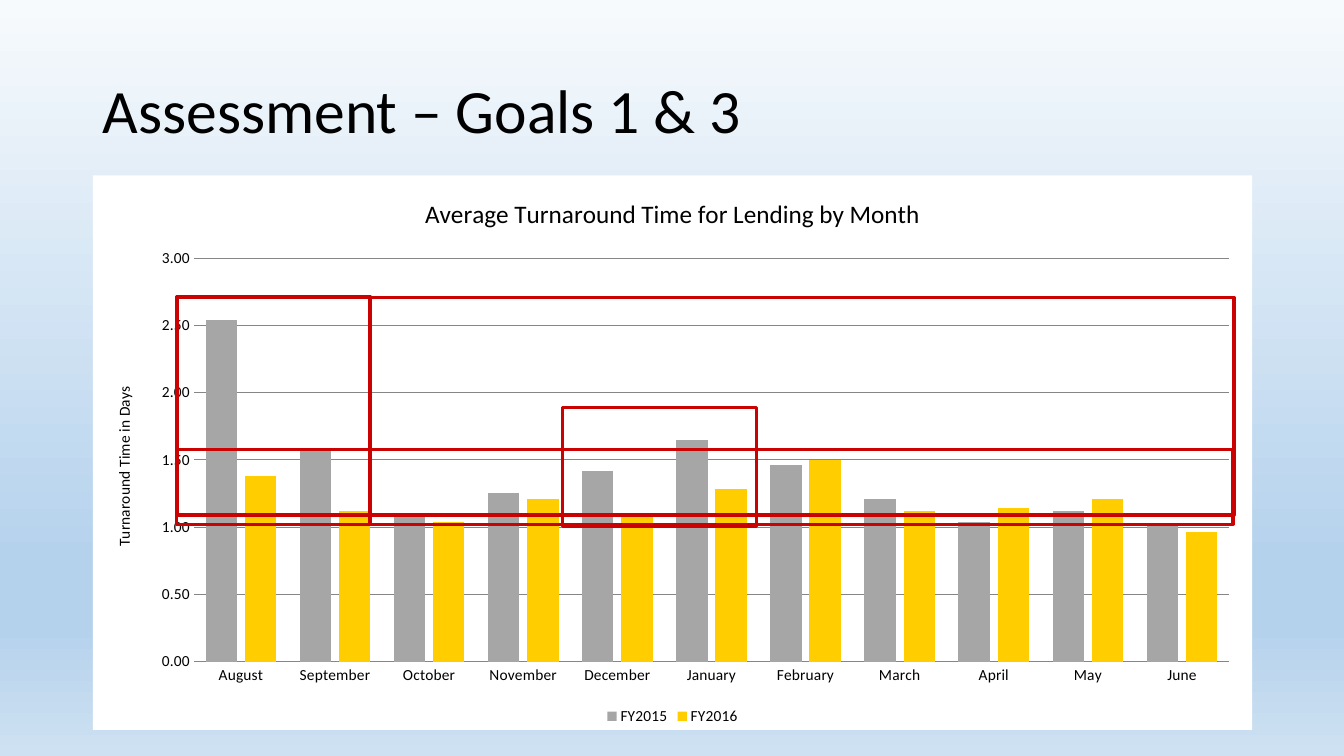
from lxml import etree
from pptx import Presentation
from pptx.chart.data import CategoryChartData
from pptx.dml.color import RGBColor
from pptx.enum.chart import XL_CHART_TYPE, XL_LEGEND_POSITION, XL_TICK_MARK
from pptx.enum.shapes import MSO_SHAPE
from pptx.enum.text import MSO_ANCHOR
from pptx.oxml import parse_xml
from pptx.oxml.ns import nsdecls, qn
from pptx.util import Inches, Pt

COLUMNS = XL_CHART_TYPE.COLUMN_CLUSTERED
BOTTOM = XL_LEGEND_POSITION.BOTTOM
NO_TICK = XL_TICK_MARK.NONE
RECTANGLE = MSO_SHAPE.RECTANGLE
MIDDLE = MSO_ANCHOR.MIDDLE

MONTHS = ["August", "September", "October", "November", "December", "January",
          "February", "March", "April", "May", "June"]
TURNAROUND = [
    ("FY2015", "A6A6A6", [2.54, 1.58, 1.08, 1.25, 1.42, 1.65, 1.46, 1.21, 1.04, 1.12, 1.02]),
    ("FY2016", "FFCD00", [1.38, 1.12, 1.04, 1.21, 1.1, 1.28, 1.5, 1.12, 1.14, 1.21, 0.96]),
]
SKY = [(0, "F7FAFD"), (74, "B5D2EC"), (83, "B5D2EC"), (100, "CEE1F2")]
HIGHLIGHTS = [
    (1.75, 2.94, 1.92, 2.26),
    (5.58, 4.04, 1.92, 1.18),
    (1.75, 4.46, 10.48, 0.74),
    (1.76, 2.95, 10.48, 2.16),
]


def rgb(value):
    return RGBColor.from_string(value)


class SlideBuilder:
    font_name = "Calibri"
    ink = "000000"
    grid_color = "868686"
    highlight_color = "CB0202"

    def __init__(self, slide):
        self.slide = slide

    def style(self, font, size):
        font.name = self.font_name
        font.size = Pt(size)
        font.bold = False
        font.color.rgb = rgb(self.ink)

    def background(self, stops):
        fill = self.slide.background.fill
        fill.gradient()
        fill.gradient_angle = 270
        stop_list = self.slide.element.find(".//" + qn("a:gsLst"))
        for stop in list(stop_list):
            stop_list.remove(stop)
        for percent, color in stops:
            stop = etree.SubElement(stop_list, qn("a:gs"), pos=str(percent * 1000))
            etree.SubElement(stop, qn("a:srgbClr"), val=color)

    def heading(self, text, box, size):
        frame = self.slide.shapes.add_textbox(*map(Inches, box)).text_frame
        frame.word_wrap = True
        frame.vertical_anchor = MIDDLE
        frame.text = text
        paragraph = frame.paragraphs[0]
        paragraph.line_spacing = 0.9
        self.style(paragraph.runs[0].font, size)

    def caption(self, owner, text, size):
        frame = owner.text_frame
        frame.text = text
        self.style(frame.paragraphs[0].runs[0].font, size)
        return frame

    def axis(self, axis):
        axis.major_tick_mark = NO_TICK
        axis.minor_tick_mark = NO_TICK
        self.style(axis.tick_labels.font, 11)

    def column_chart(self, title, value_title, categories, series, box):
        data = CategoryChartData(number_format="0.00")
        data.categories = categories
        for name, _, values in series:
            data.add_series(name, values)
        chart = self.slide.shapes.add_chart(COLUMNS, *map(Inches, box), data).chart
        self.style(chart.font, 10)
        chart.element.find(qn("c:chart")).addnext(parse_xml(
            f'<c:spPr {nsdecls("c", "a")}><a:solidFill><a:srgbClr val="FFFFFF"/>'
            '</a:solidFill><a:ln><a:noFill/></a:ln></c:spPr>'))

        self.caption(chart.chart_title, title, 18)
        chart.chart_title.include_in_layout = False
        chart.has_legend = True
        chart.legend.position = BOTTOM
        chart.legend.include_in_layout = False
        self.style(chart.legend.font, 11)

        months, days = chart.category_axis, chart.value_axis
        self.axis(months)
        self.axis(days)
        months.format.line.color.rgb = rgb(self.grid_color)
        days.format.line.fill.background()
        days.minimum_scale, days.maximum_scale, days.major_unit = 0, 3, 0.5
        days.major_gridlines.format.line.color.rgb = rgb(self.grid_color)
        days.tick_labels.number_format = "0.00"
        days.tick_labels.number_format_is_linked = False
        value_frame = self.caption(days.axis_title, value_title, 11)
        value_frame._txBody.bodyPr.set("rot", "-5400000")

        plot = chart.plots[0]
        plot.vary_by_categories = False
        plot.gap_width = 75
        plot.overlap = -25
        for columns, (_, color, _) in zip(plot.series, series):
            columns.format.fill.solid()
            columns.format.fill.fore_color.rgb = rgb(color)

    def highlight(self, box):
        frame = self.slide.shapes.add_shape(RECTANGLE, *map(Inches, box))
        frame.shadow.inherit = False
        frame.fill.background()
        frame.line.color.rgb = rgb(self.highlight_color)
        frame.line.width = Pt(2.25)


def main():
    deck = Presentation()
    deck.slide_width = Inches(13.33)
    deck.slide_height = Inches(7.5)
    builder = SlideBuilder(deck.slides.add_slide(deck.slide_layouts[6]))
    builder.background(SKY)
    builder.heading("Assessment – Goals 1 & 3", (0.92, 0.4, 11.5, 1.45), 44)
    builder.column_chart("Average Turnaround Time for Lending by Month",
                         "Turnaround Time in Days", MONTHS, TURNAROUND,
                         (0.92, 1.74, 11.5, 5.5))
    for box in HIGHLIGHTS:
        builder.highlight(box)
    deck.save("out.pptx")


if __name__ == "__main__":
    main()
